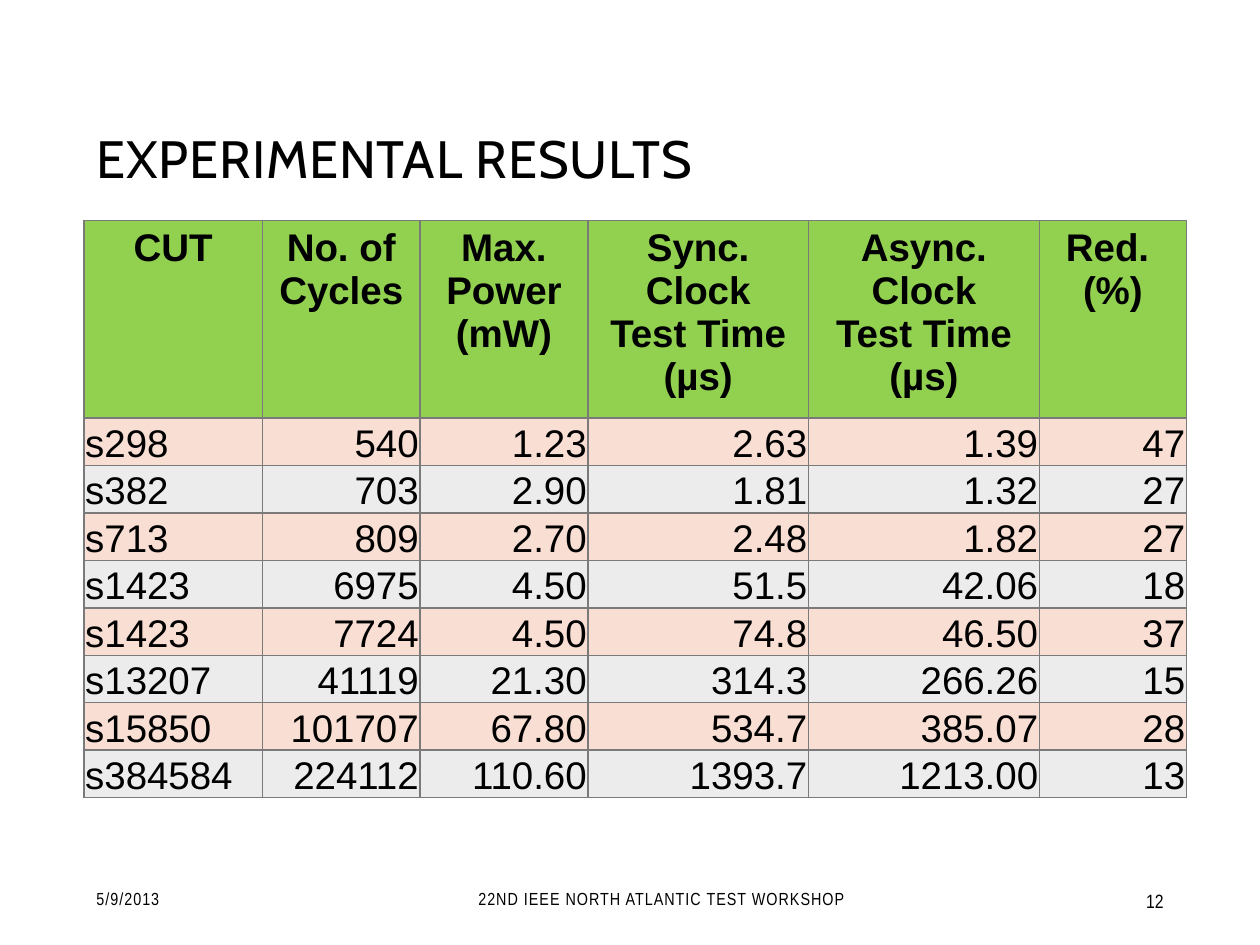
"""Build the experimental results slide with its circuit test time table."""
from dataclasses import dataclass

from lxml.etree import SubElement
from pptx import Presentation
from pptx.dml.color import RGBColor
from pptx.enum.text import MSO_ANCHOR, PP_ALIGN
from pptx.oxml.ns import qn
from pptx.util import Inches, Pt


@dataclass(frozen=True)
class Theme:
    text: str = "000000"
    header: str = "92D050"
    bands: tuple = ("F8DED3", "ECECEC")
    border: str = "7A7A7A"
    border_width: int = 1
    title_font: str = "Cabin"
    table_font: str = "Arial"
    footer_font: str = "Arial Narrow"
    title_size: int = 30
    table_size: int = 22
    footer_size: int = 10
    number_size: int = 11


theme = Theme()


def format_text(frame, font_name, size, alignment, anchor, bold=False, spacing=0):
    frame.vertical_anchor = anchor
    for paragraph in frame.paragraphs:
        paragraph.alignment = alignment
        for run in paragraph.runs:
            run.font.name = font_name
            run.font.size = Pt(size)
            run.font.bold = bold
            run.font.color.rgb = RGBColor.from_string(theme.text)
            if spacing:
                run._r.get_or_add_rPr().set("spc", str(spacing))


def add_borders(cell):
    properties = cell._tc.get_or_add_tcPr()
    for index, side in enumerate(("lnL", "lnR", "lnT", "lnB")):
        line = SubElement(properties, qn(f"a:{side}"), w=str(Pt(theme.border_width)))
        SubElement(SubElement(line, qn("a:solidFill")), qn("a:srgbClr"), val=theme.border)
        properties.insert(index, line)


presentation = Presentation()
presentation.slide_width, presentation.slide_height = Inches(10), Inches(7.5)
column = presentation.slide_width / 120
row = presentation.slide_height / 90
slide = presentation.slides.add_slide(presentation.slide_layouts[5])

title = slide.shapes.title
title.left, title.top = int(8 * column), int(3.6 * row)
title.width, title.height = int(104 * column), int(15 * row)
title.text_frame.text = "EXPERIMENTAL RESULTS"
format_text(title.text_frame, theme.title_font, theme.title_size,
            PP_ALIGN.LEFT, MSO_ANCHOR.BOTTOM, spacing=50)

footers = [
    ("5/9/2013", 8, 83.2, 20, PP_ALIGN.LEFT, theme.footer_size, 60),
    ("22ND IEEE NORTH ATLANTIC TEST WORKSHOP", 44, 83.2, 38, PP_ALIGN.CENTER,
     theme.footer_size, 60),
    ("12", 99, 83.4, 13, PP_ALIGN.RIGHT, theme.number_size, 0),
]
for text, left, top, width, alignment, size, spacing in footers:
    footer = slide.shapes.add_textbox(int(left * column), int(top * row),
                                      int(width * column), int(4.8 * row))
    footer.text_frame.word_wrap = True
    footer.text_frame.text = text
    format_text(footer.text_frame, theme.footer_font, size, alignment,
                MSO_ANCHOR.MIDDLE, spacing=spacing)

records = [
    ("CUT", "No. of Cycles", "Max. Power\n(mW)", "Sync. Clock\nTest Time\n(µs)",
     "Async. Clock\nTest Time\n(µs)", "Red. \n(%)"),
    ("s298", "540", "1.23", "2.63", "1.39", "47"),
    ("s382", "703", "2.90", "1.81", "1.32", "27"),
    ("s713", "809", "2.70", "2.48", "1.82", "27"),
    ("s1423", "6975", "4.50", "51.5", "42.06", "18"),
    ("s1423", "7724", "4.50", "74.8", "46.50", "37"),
    ("s13207", "41119", "21.30", "314.3", "266.26", "15"),
    ("s15850", "101707", "67.80", "534.7", "385.07", "28"),
    ("s384584", "224112", "110.60", "1393.7", "1213.00", "13"),
]
column_spans = [17, 15, 16, 21, 22, 14]
row_spans = [16] + [4.5] * 7 + [4.2]
table = slide.shapes.add_table(
    len(records), len(column_spans), int(8 * column), int(21 * row),
    int(sum(column_spans) * column), int(sum(row_spans) * row)).table
for table_column, span in zip(table.columns, column_spans):
    table_column.width = int(span * column)
for table_row, span in zip(table.rows, row_spans):
    table_row.height = int(span * row)

for row_index, record in enumerate(records):
    is_header = row_index == 0
    for column_index, value in enumerate(record):
        cell = table.cell(row_index, column_index)
        cell.text_frame.text = value
        if is_header:
            fill, alignment, anchor = theme.header, PP_ALIGN.CENTER, MSO_ANCHOR.TOP
        else:
            fill = theme.bands[(row_index - 1) % 2]
            alignment = PP_ALIGN.RIGHT if column_index else PP_ALIGN.LEFT
            anchor = MSO_ANCHOR.BOTTOM
            cell.margin_left = cell.margin_right = cell.margin_top = Inches(0.01)
            cell.margin_bottom = 0
        format_text(cell.text_frame, theme.table_font, theme.table_size,
                    alignment, MSO_ANCHOR.TOP, bold=is_header)
        cell.vertical_anchor = anchor
        cell.fill.solid()
        cell.fill.fore_color.rgb = RGBColor.from_string(fill)
        add_borders(cell)

presentation.save("out.pptx")
